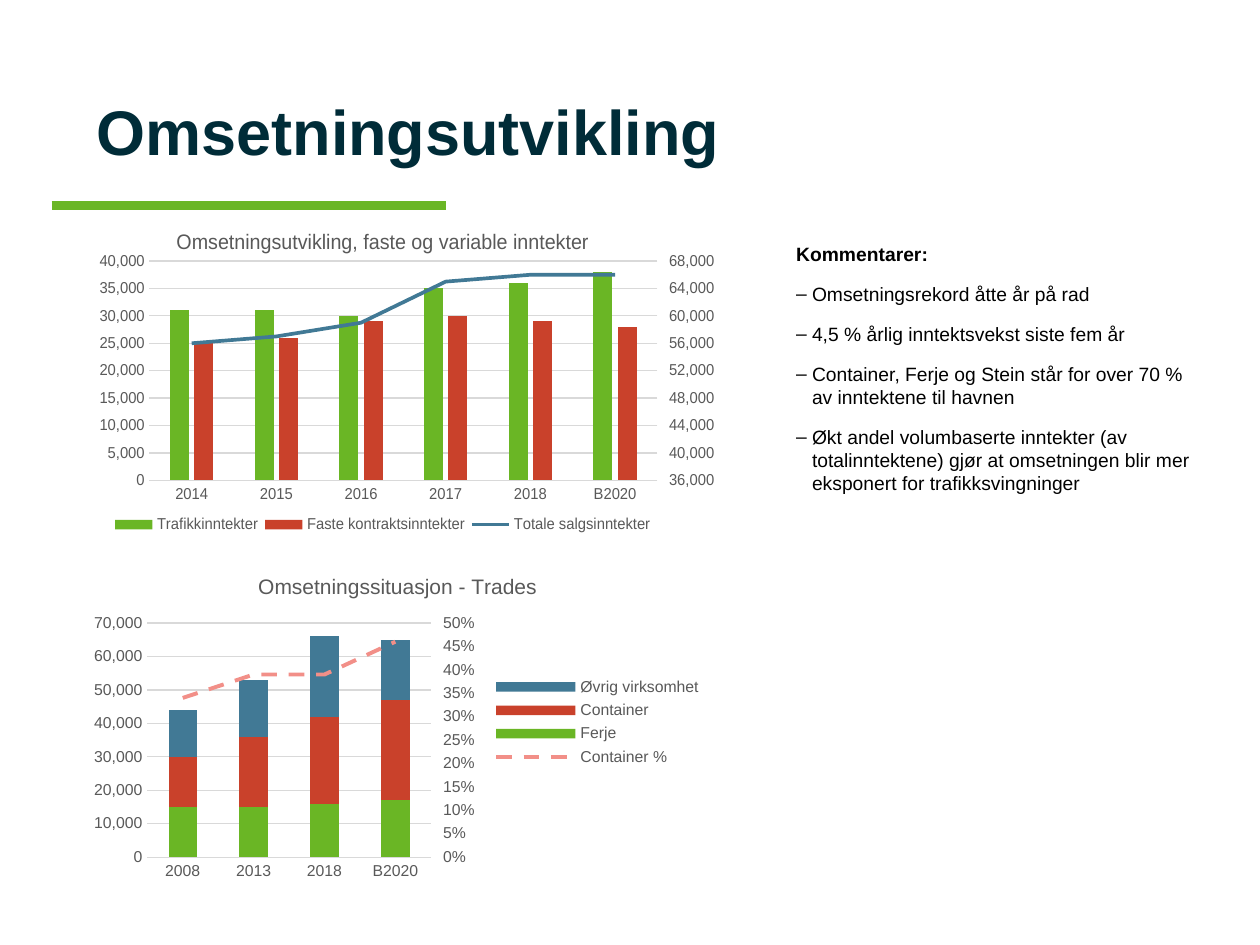
from dataclasses import dataclass
from typing import Optional

from pptx import Presentation
from pptx.chart.data import CategoryChartData
from pptx.dml.color import RGBColor
from pptx.enum.chart import XL_CHART_TYPE, XL_LEGEND_POSITION, XL_MARKER_STYLE, XL_TICK_MARK
from pptx.enum.dml import MSO_LINE
from pptx.enum.shapes import MSO_CONNECTOR
from pptx.enum.text import MSO_ANCHOR
from pptx.oxml import parse_xml
from pptx.oxml.ns import nsdecls, qn
from pptx.util import Cm, Pt

CLUSTERED, STACKED = XL_CHART_TYPE.COLUMN_CLUSTERED, XL_CHART_TYPE.COLUMN_STACKED
BOTTOM, RIGHT = XL_LEGEND_POSITION.BOTTOM, XL_LEGEND_POSITION.RIGHT
NO_TICK, NO_MARKER = XL_TICK_MARK.NONE, XL_MARKER_STYLE.NONE
DASH, SOLID = MSO_LINE.DASH, MSO_LINE.SOLID
STRAIGHT, MIDDLE = MSO_CONNECTOR.STRAIGHT, MSO_ANCHOR.MIDDLE


@dataclass(frozen=True)
class Theme:
    font: str = "Arial"
    heading: str = "002C38"
    text: str = "000000"
    chart_text: str = "595959"
    grid: str = "D9D9D9"
    green: str = "6AB625"
    red: str = "C9412B"
    blue: str = "417995"
    pink: str = "F28F88"
    heading_size: float = 36
    body_size: float = 11
    chart_title_size: float = 12
    chart_size: float = 9


THEME = Theme()


@dataclass(frozen=True)
class Box:
    """Lengths in centimetres, or fractions of a chart when used inside one."""
    left: float
    top: float
    width: float
    height: float

    def lengths(self):
        return Cm(self.left), Cm(self.top), Cm(self.width), Cm(self.height)

    def fractions(self) -> dict:
        return {"x": self.left, "y": self.top, "w": self.width, "h": self.height}


@dataclass(frozen=True)
class Series:
    name: str
    values: tuple
    color: str


@dataclass(frozen=True)
class RightAxis:
    number_format: str
    minimum: float
    maximum: float
    step: float


@dataclass(frozen=True)
class ComboChart:
    title: str
    title_at: tuple
    box: Box
    plot: Box
    kind: int
    categories: tuple
    columns: tuple
    line: Series
    dash: int
    gap: int
    overlap: int
    left_maximum: float
    left_step: float
    right_axis: RightAxis
    legend: int
    legend_box: Optional[Box] = None


CHARTS = (
    ComboChart(
        "Omsetningssituasjon - Trades", (0.27, 0.04),
        Box(1.7, 11.23, 12.7, 6.65), Box(0.1, 0.2, 0.45, 0.71), STACKED,
        ("2008", "2013", "2018", "B2020"),
        (Series("Ferje", (15000, 15000, 16000, 17000), THEME.green),
         Series("Container", (15000, 21000, 26000, 30000), THEME.red),
         Series("Øvrig virksomhet", (14000, 17000, 24000, 18000), THEME.blue)),
        Series("Container %", (0.34, 0.39, 0.39, 0.46), THEME.pink), DASH,
        150, 100, 70000, 10000, RightAxis("0%", 0, 0.5, 0.05), RIGHT),
    ComboChart(
        "Omsetningsutvikling, faste og variable inntekter", (0.15, 0.03),
        Box(1.7, 4.34, 12.7, 6.6), Box(0.11, 0.14, 0.86, 0.67), CLUSTERED,
        ("2014", "2015", "2016", "2017", "2018", "B2020"),
        (Series("Trafikkinntekter", (31000, 31000, 30000, 35000, 36000, 38000), THEME.green),
         Series("Faste kontraktsinntekter", (25000, 26000, 29000, 30000, 29000, 28000), THEME.red)),
        Series("Totale salgsinntekter", (56000, 57000, 59000, 65000, 66000, 66000), THEME.blue), SOLID,
        219, -27, 40000, 5000, RightAxis("#,##0", 36000, 68000, 4000), BOTTOM,
        Box(0.04, 0.9, 0.93, 0.09)),
)

COMMENTS = (
    "Omsetningsrekord åtte år på rad",
    "4,5 % årlig inntektsvekst siste fem år",
    "Container, Ferje og Stein står for over 70 % av inntektene til havnen",
    "Økt andel volumbaserte inntekter (av totalinntektene) gjør at omsetningen "
    "blir mer eksponert for trafikksvingninger",
)


def style_font(font, color: str, size: float, bold: bool = False) -> None:
    for name, value in {"name": THEME.font, "size": Pt(size), "bold": bold}.items():
        setattr(font, name, value)
    font.color.rgb = RGBColor.from_string(color)


def style_line(line, color: str, width: float) -> None:
    line.color.rgb = RGBColor.from_string(color)
    line.width = Pt(width)


def place(element, position: int, fields: dict) -> None:
    """Replace the layout of a chart part by a manual one."""
    for old in element.findall(qn("c:layout")):
        element.remove(old)
    items = "".join(f'<c:{name} val="{value}"/>' for name, value in fields.items())
    element.insert(position, parse_xml(
        f'<c:layout {nsdecls("c")}><c:manualLayout>{items}</c:manualLayout></c:layout>'))


def move_last_series_to_line(chart, axis: RightAxis) -> None:
    """Turn the last column series into a line on a second axis."""
    area = chart._chartSpace.chart.plotArea
    bars = area.find(qn("c:barChart"))
    series = bars.findall(qn("c:ser"))[-1]
    for flag in series.findall(qn("c:invertIfNegative")):
        series.remove(flag)
    line = parse_xml(
        f'<c:lineChart {nsdecls("c")}><c:grouping val="standard"/><c:varyColors val="0"/>'
        '<c:marker val="1"/><c:axId val="5001"/><c:axId val="5002"/></c:lineChart>')
    line.insert(2, series)
    bars.addnext(line)
    categories = parse_xml(
        f'<c:catAx {nsdecls("c")}><c:axId val="5001"/>'
        '<c:scaling><c:orientation val="minMax"/></c:scaling><c:delete val="1"/>'
        '<c:axPos val="b"/><c:crossAx val="5002"/></c:catAx>')
    values = parse_xml(
        f'<c:valAx {nsdecls("c", "a")}><c:axId val="5002"/><c:scaling><c:orientation val="minMax"/>'
        f'<c:max val="{axis.maximum}"/><c:min val="{axis.minimum}"/></c:scaling><c:delete val="0"/>'
        f'<c:axPos val="r"/><c:numFmt formatCode="{axis.number_format}" sourceLinked="0"/>'
        '<c:majorTickMark val="out"/><c:minorTickMark val="none"/><c:tickLblPos val="nextTo"/>'
        '<c:spPr><a:ln><a:noFill/></a:ln></c:spPr><c:txPr><a:bodyPr/><a:p><a:pPr>'
        f'<a:defRPr sz="{THEME.chart_size * 100}" b="0"><a:solidFill><a:srgbClr val="{THEME.chart_text}"/>'
        f'</a:solidFill><a:latin typeface="{THEME.font}"/></a:defRPr></a:pPr>'
        '<a:endParaRPr lang="nb-NO"/></a:p></c:txPr><c:crossAx val="5001"/><c:crosses val="max"/>'
        f'<c:crossBetween val="between"/><c:majorUnit val="{axis.step}"/></c:valAx>')
    last_axis = area.findall(qn("c:valAx"))[-1]
    last_axis.addnext(categories)
    last_axis.addnext(values)


def style_axes(chart, left_maximum: float, left_step: float) -> None:
    for axis in (chart.category_axis, chart.value_axis):
        axis.major_tick_mark = axis.minor_tick_mark = NO_TICK
        style_font(axis.tick_labels.font, THEME.chart_text, THEME.chart_size)
    style_line(chart.category_axis.format.line, THEME.grid, 0.75)
    axis = chart.value_axis
    for name, value in {"minimum_scale": 0, "maximum_scale": left_maximum, "major_unit": left_step}.items():
        setattr(axis, name, value)
    axis.format.line.fill.background()
    style_line(axis.major_gridlines.format.line, THEME.grid, 0.75)
    axis.tick_labels.number_format = "#,##0"
    axis.tick_labels.number_format_is_linked = False


def add_combo_chart(page, combo: ComboChart) -> None:
    data = CategoryChartData()
    data.categories = combo.categories
    for series in (*combo.columns, combo.line):
        data.add_series(series.name, series.values)
    chart = page.shapes.add_chart(combo.kind, *combo.box.lengths(), data).chart
    style_font(chart.font, THEME.text, 10)
    style_axes(chart, combo.left_maximum, combo.left_step)
    move_last_series_to_line(chart, combo.right_axis)

    columns, lines = chart.plots
    for name, value in {"gap_width": combo.gap, "overlap": combo.overlap, "vary_by_categories": False}.items():
        setattr(columns, name, value)
    for drawn, series in zip(columns.series, combo.columns):
        drawn.format.fill.solid()
        drawn.format.fill.fore_color.rgb = RGBColor.from_string(series.color)
    curve = lines.series[0]
    curve.smooth = False
    curve.marker.style = NO_MARKER
    style_line(curve.format.line, combo.line.color, 2.25)
    curve.format.line.dash_style = combo.dash

    chart.has_title = True
    title = chart.chart_title
    write(title.text_frame.paragraphs[0], combo.title, THEME.chart_text, THEME.chart_title_size)
    edges = {"xMode": "edge", "yMode": "edge"}
    place(title._element, 1, {**edges, **dict(zip("xy", combo.title_at))})
    place(chart._chartSpace.chart.plotArea, 0, {"layoutTarget": "inner", **edges, **combo.plot.fractions()})

    chart.has_legend = True
    chart.legend.position = combo.legend
    chart.legend.include_in_layout = False
    style_font(chart.legend.font, THEME.chart_text, THEME.chart_size)
    if combo.legend_box:
        place(chart.legend._element, 1, {**edges, **combo.legend_box.fractions()})


def add_text_box(page, box: Box, anchor: Optional[int] = None):
    frame = page.shapes.add_textbox(*box.lengths()).text_frame
    frame.word_wrap = True
    frame.vertical_anchor = anchor
    return frame


def write(para, text: str, color: str, size: float, bold: bool = False) -> None:
    span = para.add_run()
    span.text = text
    style_font(span.font, color, size, bold)


def add_comments(page) -> None:
    frame = add_text_box(page, Box(15.8, 4.75, 8.59, 5.38))
    write(frame.paragraphs[0], "Kommentarer:", THEME.text, THEME.body_size, True)
    for comment in COMMENTS:
        para = frame.add_paragraph()
        para.space_before = Pt(9.7)
        properties = para._p.get_or_add_pPr()
        properties.set("marL", str(Cm(0.32)))
        properties.set("indent", str(-Cm(0.32)))
        properties.append(parse_xml(f'<a:buFont {nsdecls("a")} typeface="{THEME.font}"/>'))
        properties.append(parse_xml(f'<a:buChar {nsdecls("a")} char="–"/>'))
        write(para, comment, THEME.text, THEME.body_size)


def main() -> None:
    deck = Presentation()
    deck.slide_width, deck.slide_height = Cm(25.4), Cm(19.05)
    page = deck.slides.add_slide(deck.slide_layouts[6])
    rule = page.shapes.add_connector(STRAIGHT, Cm(1.04), Cm(4.14), Cm(8.99), Cm(4.14))
    style_line(rule.line, THEME.green, 5)
    rule._element.spPr.append(parse_xml(f'<a:effectLst {nsdecls("a")}/>'))
    heading = add_text_box(page, Box(1.7, 1.17, 22.66, 2.9), MIDDLE)
    write(heading.paragraphs[0], "Omsetningsutvikling", THEME.heading, THEME.heading_size, True)
    for combo in CHARTS:
        add_combo_chart(page, combo)
    add_comments(page)
    deck.save("out.pptx")


if __name__ == "__main__":
    main()
